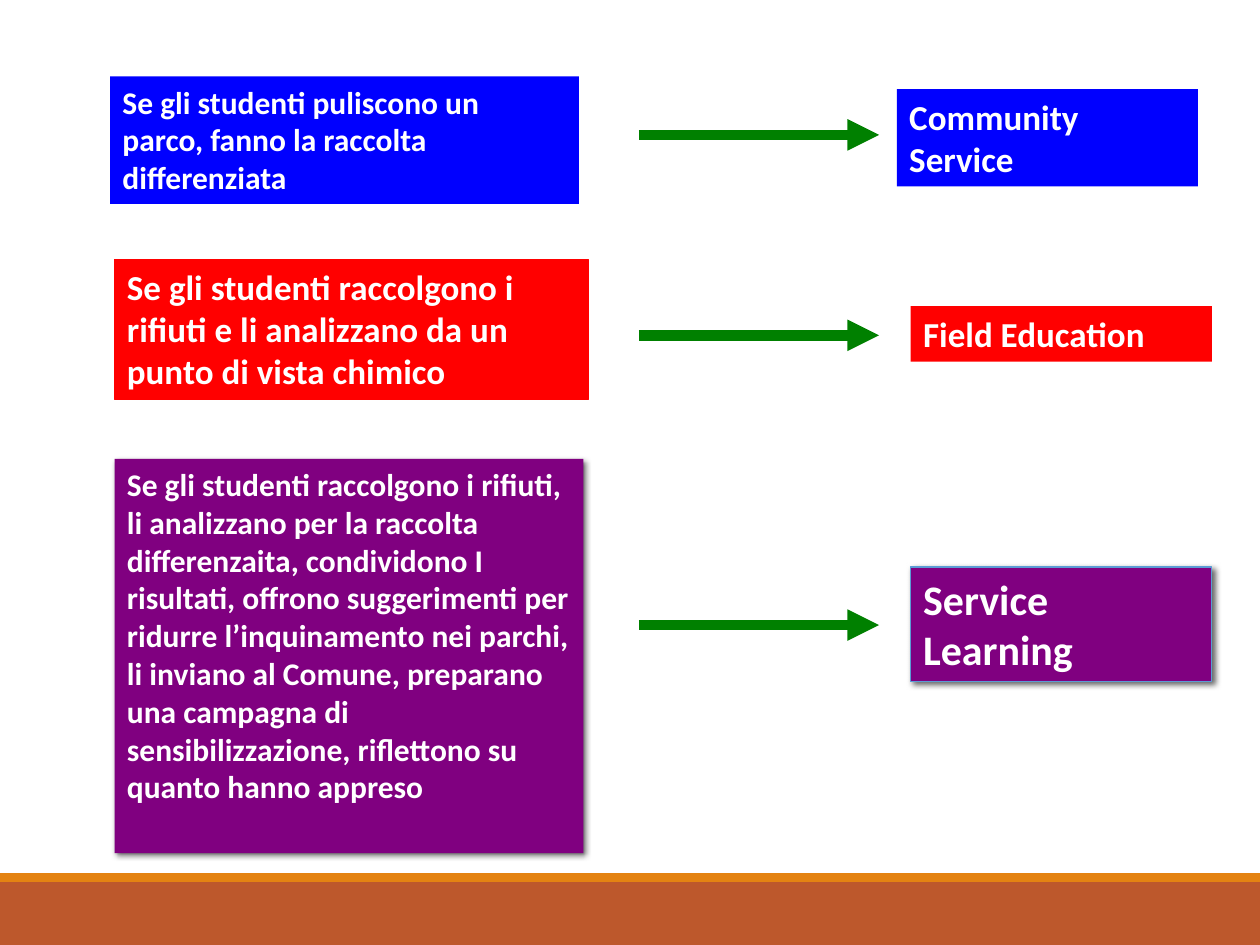
from dataclasses import dataclass
from typing import Optional

from lxml.etree import SubElement
from pptx import Presentation
from pptx.dml.color import RGBColor
from pptx.enum.shapes import MSO_CONNECTOR as Connector, MSO_SHAPE as Shape
from pptx.enum.text import MSO_ANCHOR as Anchor, PP_ALIGN as Align
from pptx.oxml.ns import qn
from pptx.util import Cm, Pt

WHITE = RGBColor(0xFF, 0xFF, 0xFF)
BLUE = RGBColor(0x00, 0x00, 0xFF)
RED = RGBColor(0xFF, 0x00, 0x00)
PURPLE = RGBColor(0x80, 0x00, 0x80)
GREEN = RGBColor(0x00, 0x80, 0x00)
LIGHT_BLUE = RGBColor(0x5B, 0x9B, 0xD5)
RUST = RGBColor(0xBD, 0x58, 0x2C)
ORANGE = RGBColor(0xE4, 0x83, 0x12)

PAGE_WIDTH, PAGE_HEIGHT = 25.4, 19.05
FOOTER_HEIGHT, STRIPE_HEIGHT = 1.27, 0.18
ARROW_LENGTH = 4.84


@dataclass
class Panel:
    """A filled text box; left and top are relative to its row."""
    left: float
    top: float
    width: float
    height: float
    text: str
    size: int
    line: Optional[RGBColor] = None


@dataclass
class Row:
    left: float
    top: float
    color: RGBColor
    case: Panel
    arrow: tuple
    label: Panel
    shadow: bool = False


ROWS = [
    Row(2.22, 1.54, BLUE,
        Panel(0, 0, 9.45, 2.57,
              "Se gli studenti puliscono un parco, fanno la raccolta differenziata", 18),
        (10.66, 1.18),
        Panel(15.86, 0.26, 6.07, 1.96, "Community Service", 20)),
    Row(2.31, 5.23, RED,
        Panel(0, 0, 9.55, 2.82,
              "Se gli studenti raccolgono i rifiuti e li analizzano da un punto di "
              "vista chimico", 20, RED),
        (10.57, 1.53),
        Panel(16.05, 0.94, 6.07, 1.12, "Field Education", 20)),
    Row(2.31, 9.25, PURPLE,
        Panel(0, 0, 9.45, 7.95,
              "Se gli studenti raccolgono i rifiuti, li analizzano per la raccolta "
              "differenzaita, condividono I risultati, offrono suggerimenti per "
              "ridurre l’inquinamento nei parchi, li inviano al Comune, preparano "
              "una campagna di sensibilizzazione, riflettono su quanto hanno appreso", 18),
        (10.57, 3.35),
        Panel(16.05, 2.18, 6.07, 2.31, "Service Learning", 24, LIGHT_BLUE),
        shadow=True),
]


def add_rectangle(page, left, top, width, height, fill, line=None):
    box = page.shapes.add_shape(Shape.RECTANGLE, Cm(left), Cm(top), Cm(width), Cm(height))
    box.shadow.inherit = False
    box.fill.solid()
    box.fill.fore_color.rgb = fill
    if line is None:
        box.line.fill.background()
    else:
        box.line.color.rgb = line
        box.line.width = Pt(0.75)
    return box


def add_drop_shadow(box):
    effects = box._element.spPr.find(qn("a:effectLst"))
    shadow = SubElement(effects, qn("a:outerShdw"), blurRad=str(Pt(3.5)),
                        dist=str(Pt(2)), dir="2700000", algn="tl", rotWithShape="0")
    color = SubElement(shadow, qn("a:srgbClr"), val="000000")
    SubElement(color, qn("a:alpha"), val="60000")


def add_panel(page, row, panel):
    box = add_rectangle(page, row.left + panel.left, row.top + panel.top,
                        panel.width, panel.height, row.color, panel.line)
    if row.shadow:
        add_drop_shadow(box)
    frame = box.text_frame
    frame.word_wrap = True
    frame.vertical_anchor = Anchor.TOP
    para = frame.paragraphs[0]
    para.alignment = Align.LEFT
    span = para.add_run()
    span.text = panel.text
    for name, value in {"name": "Calibri", "size": Pt(panel.size), "bold": True}.items():
        setattr(span.font, name, value)
    span.font.color.rgb = WHITE


def add_arrow(page, left, middle):
    arrow = page.shapes.add_connector(Connector.STRAIGHT, Cm(left), Cm(middle),
                                      Cm(left + ARROW_LENGTH), Cm(middle))
    arrow.line.color.rgb = GREEN
    arrow.line.width = Pt(6)
    SubElement(arrow.line._get_or_add_ln(), qn("a:tailEnd"), type="triangle")
    SubElement(arrow._element.spPr, qn("a:effectLst"))


def add_row(page, row):
    """Place a case, its arrow and the name of the practice it leads to."""
    add_panel(page, row, row.case)
    arrow_left, arrow_middle = row.arrow
    add_arrow(page, row.left + arrow_left, row.top + arrow_middle)
    add_panel(page, row, row.label)


def add_footer(page):
    top = PAGE_HEIGHT - FOOTER_HEIGHT
    add_rectangle(page, 0, top, PAGE_WIDTH, FOOTER_HEIGHT, RUST)
    add_rectangle(page, 0, top - STRIPE_HEIGHT, PAGE_WIDTH, STRIPE_HEIGHT, ORANGE)


def main():
    deck = Presentation()
    deck.slide_width, deck.slide_height = Cm(PAGE_WIDTH), Cm(PAGE_HEIGHT)
    page = deck.slides.add_slide(deck.slide_layouts[6])
    add_footer(page)
    for row in ROWS:
        add_row(page, row)
    deck.save("out.pptx")


if __name__ == "__main__":
    main()
